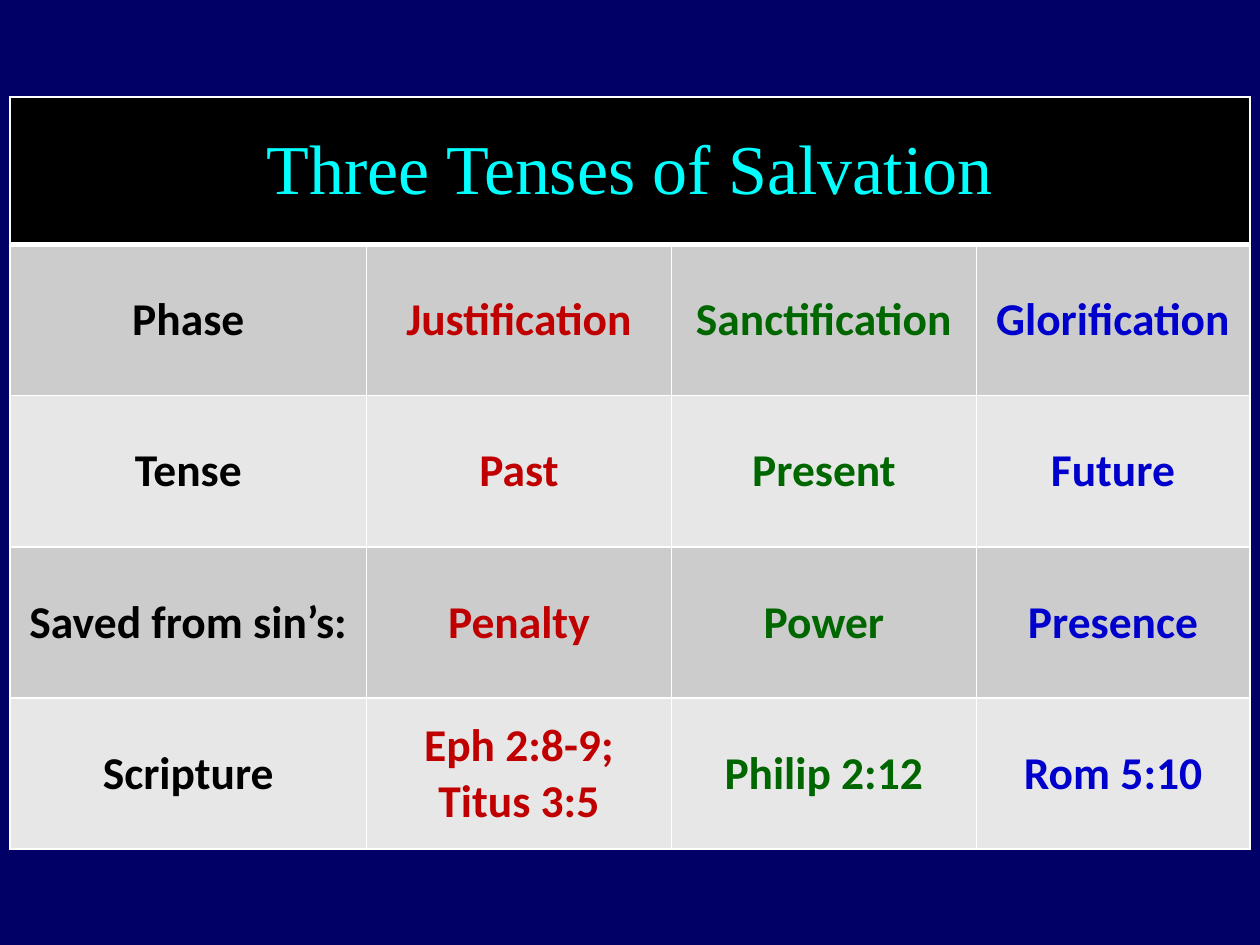
from lxml import etree
from pptx import Presentation
from pptx.dml.color import RGBColor
from pptx.enum.text import MSO_ANCHOR, PP_ALIGN
from pptx.oxml.ns import qn
from pptx.util import Inches, Pt

CENTER = PP_ALIGN.CENTER
MIDDLE = MSO_ANCHOR.MIDDLE

COLORS = {
    "background": "000066",
    "border": "FFFFFF",
    "title": "00FFFF",
    "title_fill": "000000",
    "dark_band": "CCCCCC",
    "light_band": "E7E7E7",
    "label": "000000",
    "past": "C00000",
    "present": "006600",
    "future": "0000CC",
}
TITLE = "Three Tenses of Salvation"
ROWS = [
    ["Phase", "Justification", "Sanctification", "Glorification"],
    ["Tense", "Past", "Present", "Future"],
    ["Saved from sin’s:", "Penalty", "Power", "Presence"],
    ["Scripture", "Eph 2:8-9; Titus 3:5", "Philip 2:12", "Rom 5:10"],
]
COLUMN_COLORS = ["label", "past", "present", "future"]
COLUMN_WIDTHS = [2.83, 2.42, 2.42, 2.17]
ROW_HEIGHTS = [1.17] + [1.2] * len(ROWS)


def rgb(name):
    return RGBColor.from_string(COLORS[name])


def set_borders(cell, top=1, bottom=1):
    """Draw all four cell borders; widths are in points."""
    tc_pr = cell._tc.get_or_add_tcPr()
    widths = {"a:lnL": 1, "a:lnR": 1, "a:lnT": top, "a:lnB": bottom}
    for i, (tag, width) in enumerate(widths.items()):
        ln = etree.Element(qn(tag), w=str(Pt(width)))
        fill = etree.SubElement(ln, qn("a:solidFill"))
        etree.SubElement(fill, qn("a:srgbClr"), val=COLORS["border"])
        tc_pr.insert(i, ln)


def fill_cell(cell, text, color, fill, font="Calibri", size=26, bold=True):
    cell.fill.solid()
    cell.fill.fore_color.rgb = rgb(fill)
    cell.vertical_anchor = MIDDLE
    p = cell.text_frame.paragraphs[0]
    p.text = text
    p.alignment = CENTER
    p.font.name = font
    p.font.size = Pt(size)
    p.font.bold = bold
    p.font.color.rgb = rgb(color)


def add_tenses_table(s):
    table = s.shapes.add_table(
        len(ROW_HEIGHTS), len(COLUMN_WIDTHS), Inches(0.08), Inches(0.77),
        Inches(sum(COLUMN_WIDTHS)), Inches(sum(ROW_HEIGHTS))).table
    for column, width in zip(table.columns, COLUMN_WIDTHS):
        column.width = Inches(width)
    for row, height in zip(table.rows, ROW_HEIGHTS):
        row.height = Inches(height)

    for c in range(len(COLUMN_WIDTHS)):
        set_borders(table.cell(0, c), bottom=3)
    title = table.cell(0, 0)
    title.merge(table.cell(0, len(COLUMN_WIDTHS) - 1))
    fill_cell(title, TITLE, "title", "title_fill", "Times New Roman", 40, False)

    for r, texts in enumerate(ROWS, start=1):
        band = "dark_band" if r % 2 else "light_band"
        for c, (text, color) in enumerate(zip(texts, COLUMN_COLORS)):
            cell = table.cell(r, c)
            fill_cell(cell, text, color, band)
            set_borders(cell, top=3 if r == 1 else 1)


def main():
    prs = Presentation()
    prs.slide_width, prs.slide_height = Inches(10), Inches(7.5)
    s = prs.slides.add_slide(prs.slide_layouts[6])
    s.background.fill.solid()
    s.background.fill.fore_color.rgb = rgb("background")
    add_tenses_table(s)
    prs.save("out.pptx")


if __name__ == "__main__":
    main()
